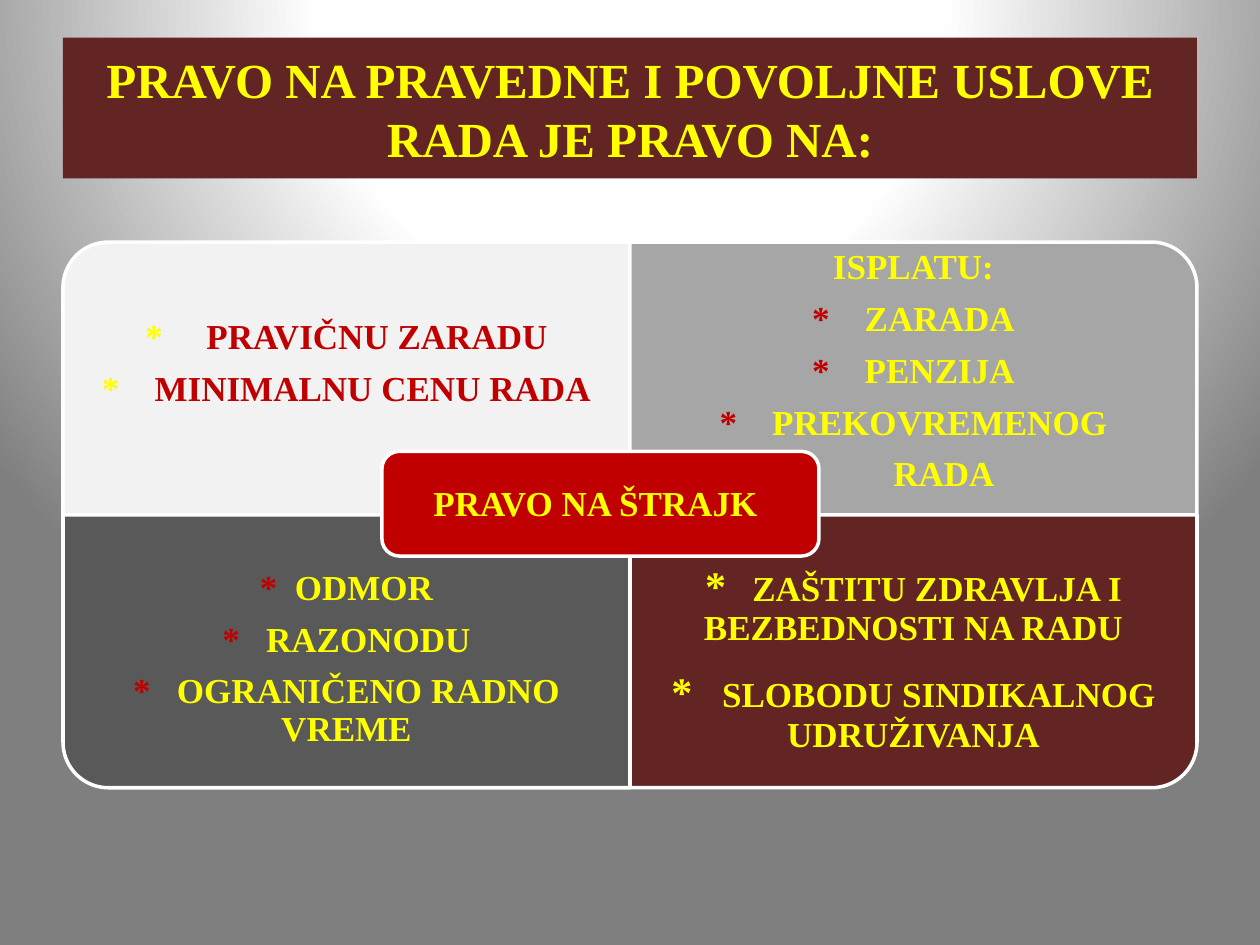
from lxml.etree import SubElement
from pptx import Presentation
from pptx.dml.color import RGBColor
from pptx.enum.shapes import MSO_SHAPE as Preset
from pptx.enum.text import MSO_ANCHOR as Anchor, PP_ALIGN as Align
from pptx.oxml.ns import qn
from pptx.util import Cm, Pt

WHITE = RGBColor(0xFF, 0xFF, 0xFF)
NEAR_WHITE = RGBColor(0xFE, 0xFE, 0xFE)
PALE = RGBColor(0xF2, 0xF2, 0xF2)
SILVER = RGBColor(0xA6, 0xA6, 0xA6)
GRAY = RGBColor(0x7F, 0x7F, 0x7F)
CHARCOAL = RGBColor(0x59, 0x59, 0x59)
MAROON = RGBColor(0x63, 0x25, 0x23)
RED = RGBColor(0xC0, 0x00, 0x00)
YELLOW = RGBColor(0xFF, 0xFF, 0x00)

LEFT, TOP = 1.27, 4.88
PANEL_WIDTH, PANEL_HEIGHT = 11.43, 5.5
TEXT_HEIGHT = 4.1

PANELS = [
    dict(column=0, row=0, turn=270, fill=PALE, middle=7.34, color=RED, star_color=YELLOW,
         lines=[("PRAVIČNU ZARADU", 10), ("MINIMALNU CENU RADA", 7.5)]),
    dict(column=1, row=0, turn=0, fill=SILVER, middle=7.5, color=YELLOW, star_color=RED,
         lines=[("ISPLATU:", None), ("ZARADA", 7.5), ("PENZIJA", 7.5),
                ("PREKOVREMENOG", 7.5), ("RADA", None, 1.23)]),
    dict(column=0, row=1, turn=180, fill=CHARCOAL, middle=13.3, color=YELLOW, star_color=RED,
         lines=[("ODMOR", 2.5), ("RAZONODU", 5), ("OGRANIČENO RADNO VREME", 5)]),
    dict(column=1, row=1, turn=90, fill=MAROON, middle=13.3, color=YELLOW, star_color=YELLOW,
         star_size=24, after=13.5,
         lines=[("ZAŠTITU ZDRAVLJA I BEZBEDNOSTI NA RADU", 4.5),
                ("SLOBODU SINDIKALNOG UDRUŽIVANJA", 5.5)]),
]


def paint_background(page):
    fill = page.background.fill
    fill.gradient()
    gradient = page.background._cSld.bg.bgPr.find(qn("a:gradFill"))
    for child in list(gradient):
        gradient.remove(child)
    stops = SubElement(gradient, qn("a:gsLst"))
    for position, color in ((0, WHITE), (40, NEAR_WHITE), (100, GRAY)):
        stop = SubElement(stops, qn("a:gs"), pos=str(position * 1000))
        SubElement(stop, qn("a:srgbClr"), val=str(color))
    shade = SubElement(gradient, qn("a:path"), {"path": "circle"})
    SubElement(shade, qn("a:fillToRect"), l="50000", t="-80000", r="50000", b="180000")


def add_span(para, text, *, color=YELLOW, size=20, spacing=0):
    span = para.add_run()
    span.text = text
    span.font.name = "Times New Roman"
    span.font.size = Pt(size)
    span.font.bold = True
    span.font.color.rgb = color
    if spacing:
        span._r.get_or_add_rPr().set("spc", str(round(spacing * 100)))


def add_block(page, preset, left, top, width, height, fill, turn=0, outlined=True):
    if turn % 180:
        left, top = left + (width - height) / 2, top + (height - width) / 2
        width, height = height, width
    block = page.shapes.add_shape(preset, Cm(left), Cm(top), Cm(width), Cm(height))
    block.rotation = turn
    block.shadow.inherit = False
    block.fill.solid()
    block.fill.fore_color.rgb = fill
    if outlined:
        block.line.color.rgb = WHITE
        block.line.width = Pt(2)
    else:
        block.line.fill.background()
    return block


def add_text_box(page, left, middle, width, height, inset):
    box = page.shapes.add_textbox(Cm(left), Cm(middle - height / 2), Cm(width), Cm(height))
    frame = box.text_frame
    frame.word_wrap = True
    frame.vertical_anchor = Anchor.MIDDLE
    frame.margin_left = frame.margin_right = Cm(inset)
    frame.margin_top = frame.margin_bottom = Cm(0)
    return frame


def add_lines(frame, lines, color, star_color=YELLOW, star_size=20, after=8):
    for number, (text, gap, *indent) in enumerate(lines):
        para = frame.add_paragraph() if number else frame.paragraphs[0]
        para.alignment = Align.CENTER
        para.line_spacing = 0.9
        if number < len(lines) - 1:
            para.space_after = Pt(after)
        if indent:
            para._p.get_or_add_pPr().set("marL", str(Cm(indent[0])))
        if gap is not None:
            add_span(para, "* ", color=star_color, size=star_size, spacing=gap)
        add_span(para, text, color=color)


def add_panel(page, column, row, turn, fill, middle, **text_format):
    left = LEFT + column * PANEL_WIDTH
    add_block(page, Preset.ROUND_1_RECTANGLE, left, TOP + row * PANEL_HEIGHT,
              PANEL_WIDTH, PANEL_HEIGHT, fill, turn)
    frame = add_text_box(page, left, middle, PANEL_WIDTH, TEXT_HEIGHT, 0.4)
    add_lines(frame, **text_format)


def add_title(page, text):
    banner = add_block(page, Preset.RECTANGLE, LEFT, 0.76, 2 * PANEL_WIDTH, 2.84,
                       MAROON, outlined=False)
    banner.text_frame.word_wrap = True
    banner.text_frame.vertical_anchor = Anchor.MIDDLE
    para = banner.text_frame.paragraphs[0]
    para.alignment = Align.CENTER
    add_span(para, text, size=28)


def add_center(page, text):
    add_block(page, Preset.ROUNDED_RECTANGLE, 7.7, 9.1, 8.81, 2.11, RED)
    frame = add_text_box(page, 7.7, 10.18, 8.61, 1.9, 0.2)
    add_lines(frame, [(text, None)], YELLOW)


def main():
    deck = Presentation()
    deck.slide_width, deck.slide_height = Cm(25.4), Cm(19.05)
    page = deck.slides.add_slide(deck.slide_layouts[6])
    paint_background(page)
    add_title(page, "PRAVO NA PRAVEDNE I POVOLJNE USLOVE RADA JE PRAVO NA:")
    for panel in PANELS:
        add_panel(page, **panel)
    add_center(page, "PRAVO NA ŠTRAJK")
    deck.save("out.pptx")


if __name__ == "__main__":
    main()
